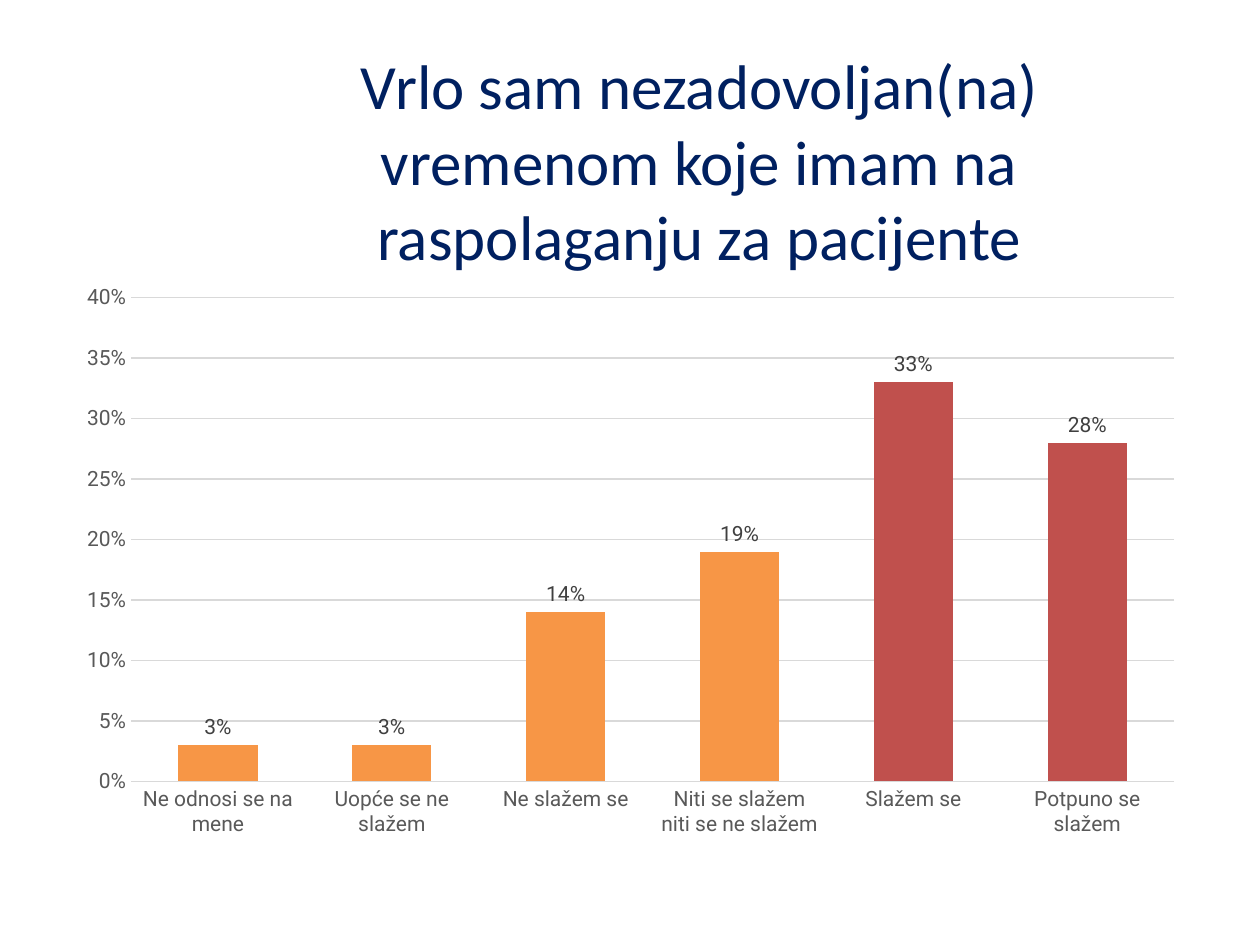
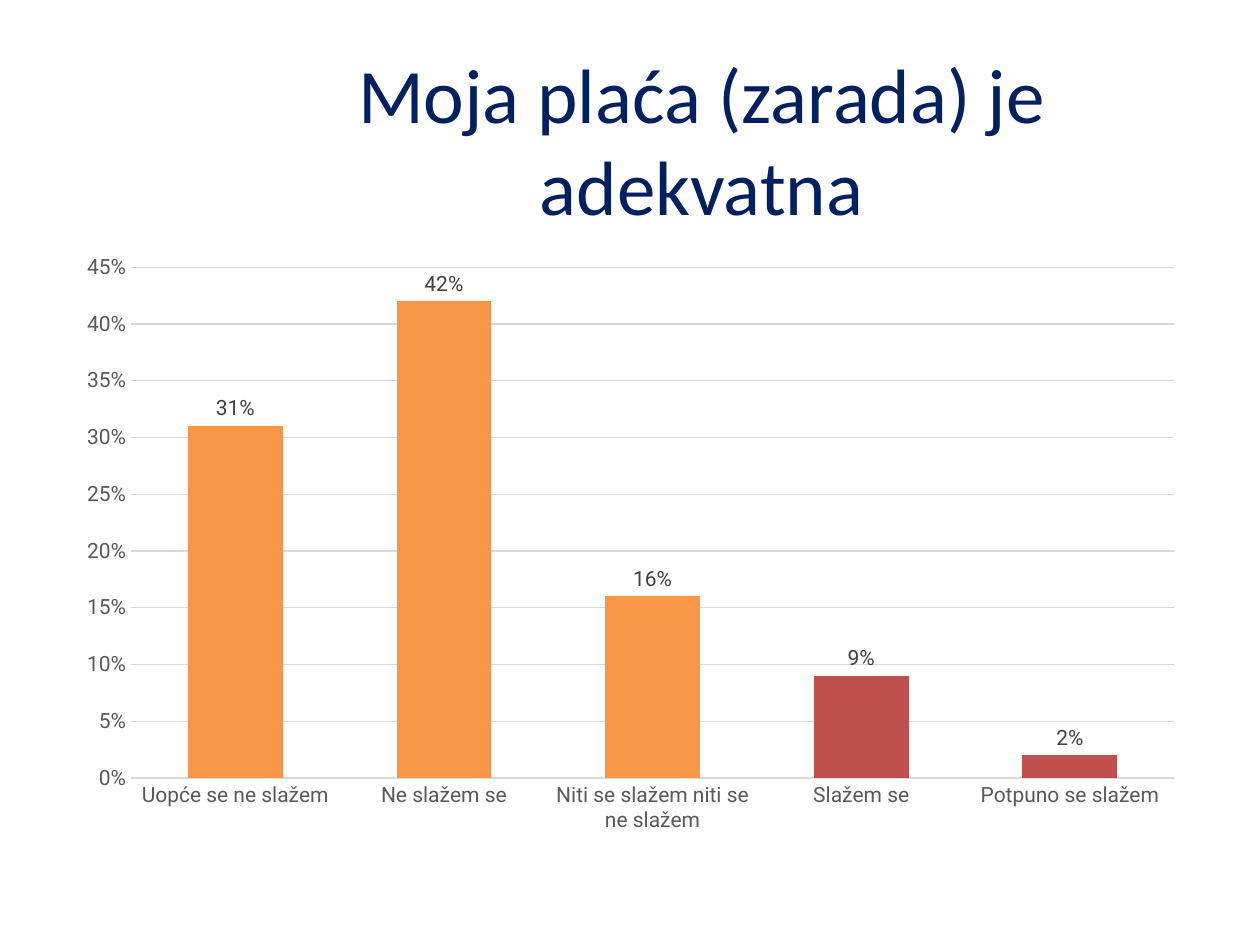
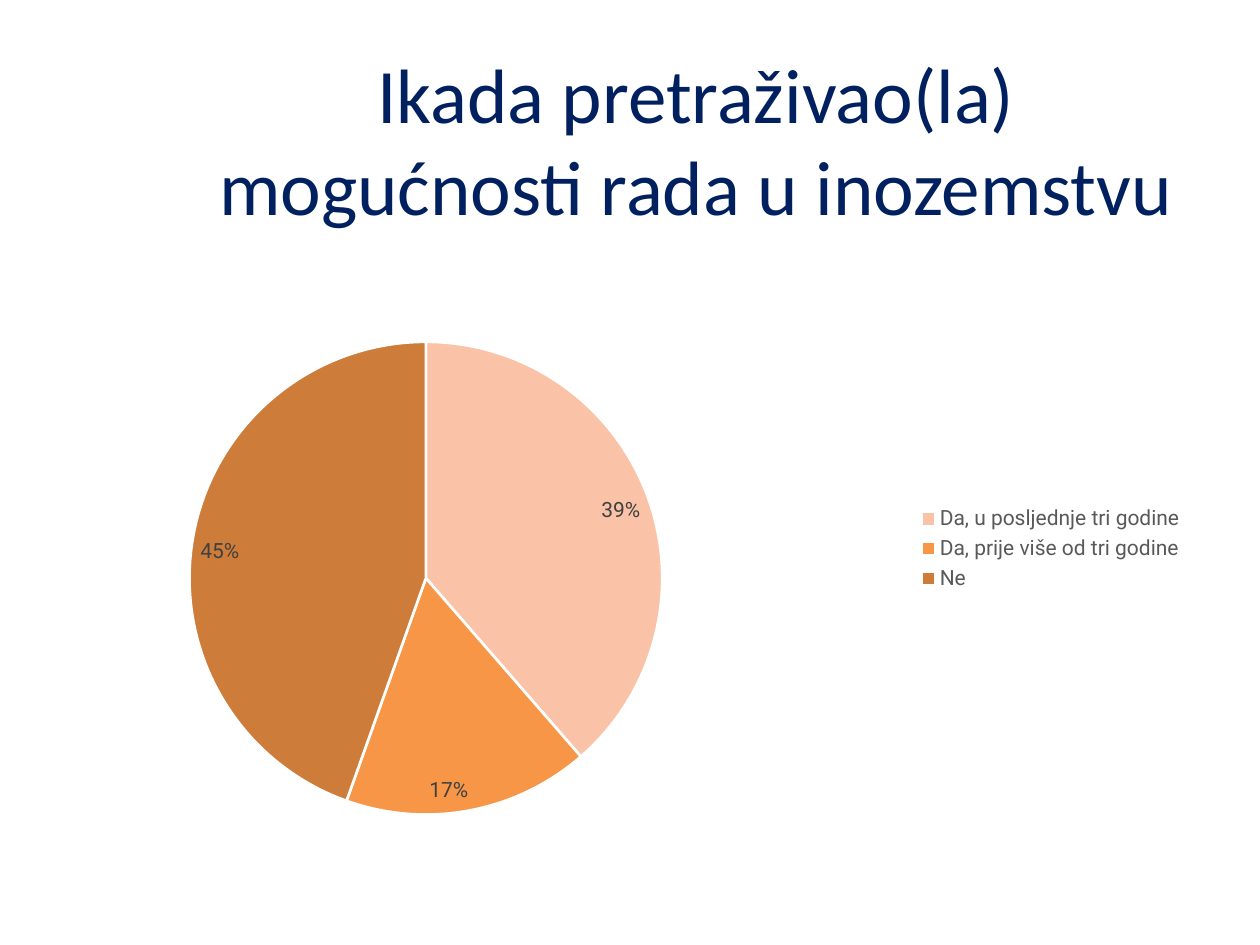
import lxml.etree
import pptx
import pptx.chart.data
import pptx.dml.color
import pptx.enum.chart
import pptx.enum.text
import pptx.oxml.ns
import pptx.util

Pt = pptx.util.Pt
CHART_KIND = pptx.enum.chart.XL_CHART_TYPE
LABEL_PLACE = pptx.enum.chart.XL_LABEL_POSITION
NO_TICK = pptx.enum.chart.XL_TICK_MARK.NONE

NAVY, ORANGE, RED = "002060", "F79646", "C0504D"
PEACH, BROWN, WHITE = "FAC3A8", "CD7C3A", "FFFFFF"
BLACK, LABEL_GREY, AXIS_GREY, GRID_GREY = "000000", "404040", "595959", "D9D9D9"

LEFT_EDGE, RIGHT_EDGE, TITLE_TOP, CHART_BOTTOM = 36, 684, 21.6, 482.4
AGREEMENT = ["Uopće se ne slažem", "Ne slažem se", "Niti se slažem niti se ne slažem",
             "Slažem se", "Potpuno se slažem"]


def colour(hex_string):
    """Turn a hex string into a colour."""
    return pptx.dml.color.RGBColor.from_string(hex_string)


def set_values(target, values):
    """Set each named attribute of the target."""
    for name, value in values.items():
        setattr(target, name, value)


def set_font(font, name, size, hex_string):
    """Give a font its typeface, size and colour."""
    set_values(font, {"name": name, "size": Pt(size)})
    font.color.rgb = colour(hex_string)


def set_fill(target, hex_string):
    """Fill a series or point with one colour."""
    target.format.fill.solid()
    target.format.fill.fore_color.rgb = colour(hex_string)


def set_line(target, hex_string, width):
    """Give the outline of a chart element its colour and width."""
    target.format.line.color.rgb = colour(hex_string)
    target.format.line.width = Pt(width)


def set_plot_area(chart, fractions):
    """Fix the inner plot area at fractions of the chart box."""
    tag = pptx.oxml.ns.qn
    plot_area = chart.element.find(".//" + tag("c:plotArea"))
    for layout in plot_area.findall(tag("c:layout")):
        plot_area.remove(layout)
    layout = lxml.etree.Element(tag("c:layout"))
    manual = lxml.etree.SubElement(layout, tag("c:manualLayout"))
    settings = {"layoutTarget": "inner", "xMode": "edge", "yMode": "edge"}
    settings.update(zip("xywh", fractions))
    for name, value in settings.items():
        lxml.etree.SubElement(manual, tag("c:" + name)).set("val", str(value))
    plot_area.insert(0, layout)


def add_page(deck, title, left, height, size):
    """Add a title-only slide with a centred title ending at the right edge."""
    page = deck.slides.add_slide(deck.slide_layouts[5])
    box = page.shapes.title
    set_values(box, {"left": Pt(left), "top": Pt(TITLE_TOP),
                     "width": Pt(RIGHT_EDGE - left), "height": Pt(height)})
    set_values(box.text_frame, {
        "text": title, "word_wrap": True, "margin_top": Pt(5),
        "auto_size": pptx.enum.text.MSO_AUTO_SIZE.NONE,
        "vertical_anchor": pptx.enum.text.MSO_ANCHOR.TOP})
    para = box.text_frame.paragraphs[0]
    para.alignment = pptx.enum.text.PP_ALIGN.CENTER
    set_font(para.runs[0].font, "Calibri", size, NAVY)
    return page


def add_chart(page, kind, top, answers, shares, colours, label_place):
    """Add a labelled one-series chart from the given top to the chart bottom."""
    data = pptx.chart.data.CategoryChartData(number_format="0%")
    data.categories = answers
    data.add_series("Series 1", shares)
    chart = page.shapes.add_chart(
        kind, Pt(LEFT_EDGE), Pt(top), Pt(RIGHT_EDGE - LEFT_EDGE),
        Pt(CHART_BOTTOM - top), data).chart
    set_values(chart, {"has_title": False, "has_legend": False})
    set_font(chart.font, "Roboto", 12, BLACK)
    plot = chart.plots[0]
    plot.has_data_labels = True
    set_values(plot.data_labels, {
        "show_value": True, "show_percentage": False, "number_format": "0%",
        "number_format_is_linked": False, "position": label_place})
    set_font(plot.data_labels.font, "Roboto", 12, LABEL_GREY)
    for index, hex_string in enumerate(colours):
        set_fill(plot.series[0].points[index], hex_string)
    return chart


def add_columns(page, top, answers, shares, maximum):
    """Add a column chart whose last two answers, the agreeing ones, are red."""
    colours = [ORANGE] * (len(answers) - 2) + [RED] * 2
    chart = add_chart(page, CHART_KIND.COLUMN_CLUSTERED, top, answers, shares,
                      colours, LABEL_PLACE.OUTSIDE_END)
    set_values(chart.plots[0], {"gap_width": 120, "overlap": -27, "vary_by_categories": False})
    set_fill(chart.plots[0].series[0], ORANGE)
    chart.plots[0].series[0].invert_if_negative = False
    for axis in (chart.category_axis, chart.value_axis):
        set_values(axis, {"major_tick_mark": NO_TICK, "minor_tick_mark": NO_TICK})
        set_font(axis.tick_labels.font, "Roboto", 12, AXIS_GREY)
    set_line(chart.category_axis, GRID_GREY, 0.75)
    axis = chart.value_axis
    set_values(axis, {"minimum_scale": 0, "maximum_scale": maximum,
                      "major_unit": 0.05, "has_major_gridlines": True})
    set_values(axis.tick_labels, {"number_format": "0%", "number_format_is_linked": False})
    set_line(axis.major_gridlines, GRID_GREY, 0.75)
    axis.format.line.fill.background()
    set_plot_area(chart, (0.06, 0.04, 0.92, 0.85))


def add_pie(page, top, answers, shares, colours):
    """Add a pie chart with white slice borders and a legend on the right."""
    chart = add_chart(page, CHART_KIND.PIE, top, answers, shares, colours,
                      LABEL_PLACE.INSIDE_END)
    chart.plots[0].vary_by_categories = True
    for index in range(len(answers)):
        set_line(chart.plots[0].series[0].points[index], WHITE, 1.5)
    chart.has_legend = True
    set_values(chart.legend, {"position": pptx.enum.chart.XL_LEGEND_POSITION.RIGHT,
                              "include_in_layout": False})
    set_font(chart.legend.font, "Roboto", 12, AXIS_GREY)
    set_plot_area(chart, (0.08, 0.15, 0.48, 0.8))


def main():
    """Build the three survey slides."""
    deck = pptx.Presentation()
    set_values(deck, {"slide_width": Pt(720), "slide_height": Pt(540)})
    page = add_page(deck, "Vrlo sam nezadovoljan(na) vremenom koje imam na raspolaganju "
                    "za pacijente", 115.2, 157, 36)
    add_columns(page, 157, ["Ne odnosi se na mene"] + AGREEMENT,
                [0.03, 0.03, 0.14, 0.19, 0.33, 0.28], 0.4)
    page = add_page(deck, "Moja plaća (zarada) je adekvatna", 118, 109.4, 44)
    add_columns(page, 139, AGREEMENT, [0.31, 0.42, 0.16, 0.09, 0.02], 0.45)
    page = add_page(deck, "Ikada pretraživao(la) mogućnosti rada u inozemstvu",
                    111.6, 114.5, 44)
    add_pie(page, 144.7, ["Da, u posljednje tri godine", "Da, prije više od tri godine", "Ne"],
            [0.39, 0.17, 0.45], [PEACH, ORANGE, BROWN])
    deck.save("out.pptx")


if __name__ == "__main__":
    main()
